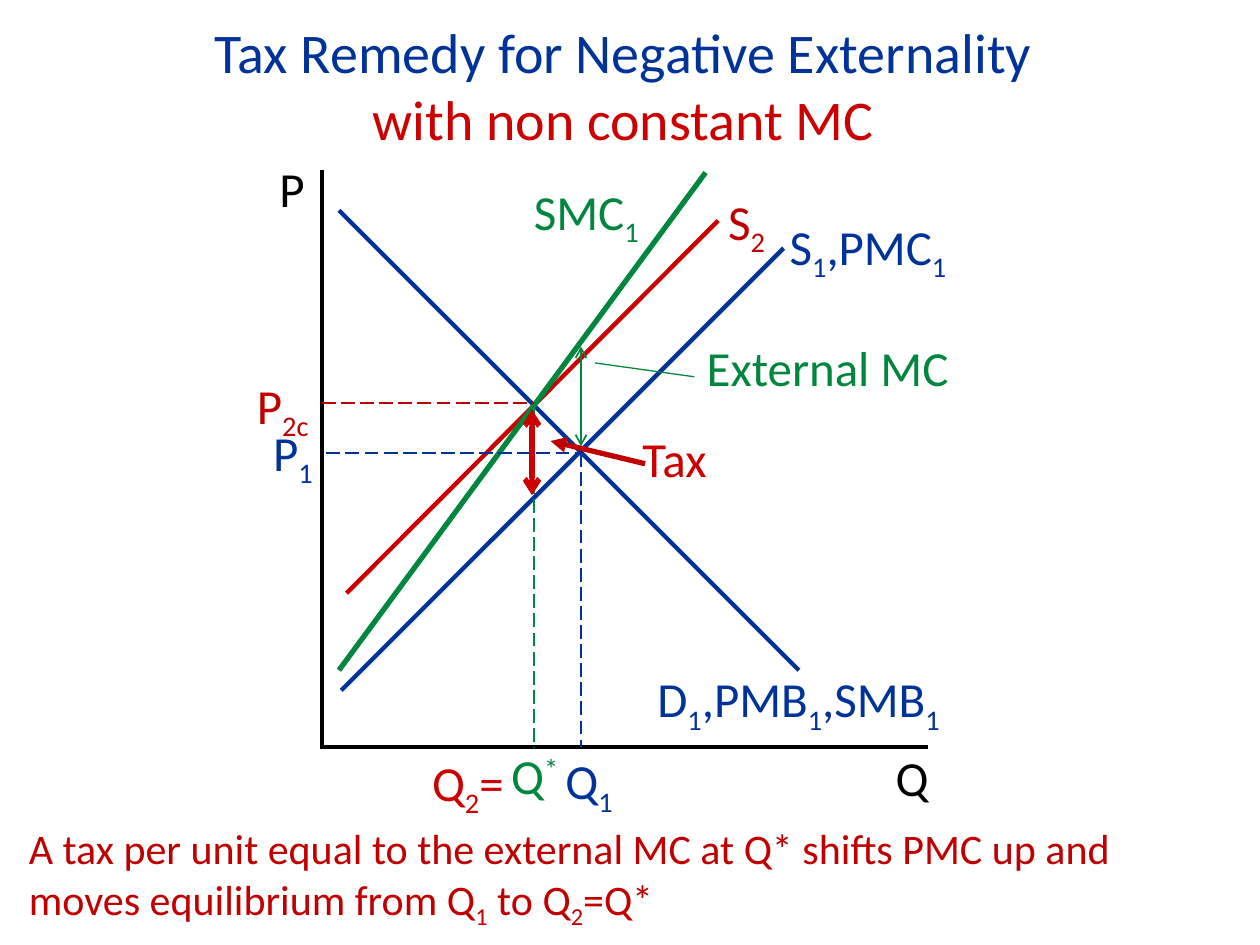
from dataclasses import dataclass

from lxml import etree
from pptx import Presentation
from pptx.dml.color import RGBColor
from pptx.enum import dml, shapes, text
from pptx.oxml.ns import qn
from pptx.util import Pt


@dataclass(frozen=True)
class Theme:
    font: str = "Calibri"
    black: str = "000000"
    blue: str = "003399"
    green: str = "00863D"
    red: str = "CC0000"
    dark_red: str = "C00000"
    title: int = 32
    label: int = 28
    caption: int = 24


T = Theme()

# Diagram coordinates in points
AXIS_X, AXIS_Y = 184, 427
Q_STAR, Q_1 = 305, 332
P_2C, P_1 = 230.5, 259


def write(p, content, color, size=T.label, base=-25, spacing=None, align=None):
    """Fill a paragraph; every second part between bars is raised or lowered."""
    p.line_spacing = spacing
    p.alignment = align
    for i, part in enumerate(content.split("|")):
        r = p.add_run()
        r.text = part
        r.font.name = T.font
        r.font.size = Pt(size)
        r.font.color.rgb = RGBColor.from_string(color)
        if i % 2:
            r.font._element.set("baseline", str(base * 1000))


def add_text(s, x, y, w, h, content, color, **fmt):
    sp = s.shapes.add_textbox(Pt(x), Pt(y), Pt(w), Pt(h))
    tf = sp.text_frame
    tf.word_wrap = True
    write(tf.paragraphs[0], content, color, **fmt)
    return sp


def add_line(s, start, end, color, width=2.5, dashed=False, head=None, tail=None):
    c = s.shapes.add_connector(shapes.MSO_CONNECTOR.STRAIGHT,
                               *(Pt(v) for v in (*start, *end)))
    c.line.color.rgb = RGBColor.from_string(color)
    c.line.width = Pt(width)
    if dashed:
        c.line.dash_style = dml.MSO_LINE.LONG_DASH
    ln = c.line._get_or_add_ln()
    for tag, kind in (("a:headEnd", head), ("a:tailEnd", tail)):
        if kind:
            etree.SubElement(ln, qn(tag), type=kind)
    etree.SubElement(c._element.spPr, qn("a:effectLst"))
    return c


def add_title(s):
    sp = s.shapes.title
    sp.left, sp.top, sp.width, sp.height = Pt(50.4), Pt(6), Pt(619), Pt(85)
    tf = sp.text_frame
    tf.auto_size = text.MSO_AUTO_SIZE.NONE
    tf.vertical_anchor = text.MSO_ANCHOR.MIDDLE
    fmt = dict(size=T.title, align=text.PP_ALIGN.CENTER)
    write(tf.paragraphs[0], "Tax Remedy for Negative Externality ", T.blue, **fmt)
    write(tf.add_paragraph(), "with non constant MC ", T.red, **fmt)


def add_axes(s):
    add_line(s, (AXIS_X, 97), (AXIS_X, 428), T.black)
    add_line(s, (AXIS_X, AXIS_Y), (530.5, AXIS_Y), T.black)
    add_text(s, 152.6, 93.6, 32, 35, "P", T.black, spacing=0.8)
    add_text(s, 504.7, 423.4, 37, 41, "Q", T.black)


def add_curves(s):
    # Demand, private supply, taxed supply and social cost
    add_line(s, (193.7, 120.2), (456.5, 383), T.blue)
    add_line(s, (195, 394.5), (447.8, 141.8), T.blue)
    add_line(s, (198, 339), (410.4, 126), T.red)
    add_line(s, (403.2, 98.6), (193.7, 383), T.green, 3)
    for x, y, w, content, color in (
        (368.6, 378.7, 186, "D|1|,PMB|1|,SMB|1", T.blue),
        (444.2, 120.2, 108, "S|1|,PMC|1", T.blue),
        (298, 100, 148, "SMC|1", T.green),
    ):
        add_text(s, x, y, w, 41, content, color)
    add_text(s, 409, 109.4, 42, 35, "S|2", T.dark_red, spacing=0.8)


def add_equilibria(s):
    # Guide lines to both axes
    for start, end, color in (
        ((Q_1, P_1), (Q_1, AXIS_Y), T.blue),
        ((Q_STAR, P_2C), (Q_STAR, AXIS_Y), T.green),
        ((186.5, P_1), (334, P_1), T.blue),
        ((AXIS_X, P_2C), (Q_STAR, P_2C), T.dark_red),
    ):
        add_line(s, start, end, color, 1, dashed=True)

    # Quantity and price labels
    for x, y, w, content, color, base in (
        (316, 429, 54, "Q|1", T.blue, -25),
        (285, 429, 54, "Q|*", T.green, 30),
        (239.8, 429.8, 67, "Q|2|=", T.red, -25),
        (149, 241.2, 42, "P|1", T.blue, -25),
        (139.7, 214.6, 49, "P|2c", T.dark_red, -25),
    ):
        add_text(s, x, y, w, 35, content, color, base=base, spacing=0.8)


def add_gaps(s):
    # External cost
    add_line(s, (Q_1, 198), (Q_1, 255), T.green, 1, head="arrow", tail="arrow")
    external = add_text(s, 396.7, 195.8, 171, 39, "External MC", T.green, spacing=0.8)
    pointer = add_line(s, (340, 207.4), (396.7, 215.3), T.green, 0.75)
    pointer.end_connect(external, 1)

    # Tax per unit
    add_line(s, (304, 234), (304, 283), T.red, 3, head="arrow", tail="arrow")
    add_text(s, 360, 247.7, 163, 35, "Tax", T.red, spacing=0.8)
    add_line(s, (368.6, 265), (314.6, 252), T.dark_red, 3, tail="triangle")


def main():
    prs = Presentation()
    prs.slide_width, prs.slide_height = Pt(720), Pt(540)
    s = prs.slides.add_slide(prs.slide_layouts[5])
    add_title(s)
    add_axes(s)
    add_curves(s)
    add_equilibria(s)
    add_gaps(s)
    # Conclusion
    add_text(s, 9.4, 466.6, 695.5, 65.5,
             "A tax per unit equal to the external MC at Q* shifts PMC up and "
             "moves equilibrium from Q|1| to Q|2|=Q*",
             T.dark_red, size=T.caption)
    prs.save("out.pptx")


if __name__ == "__main__":
    main()
